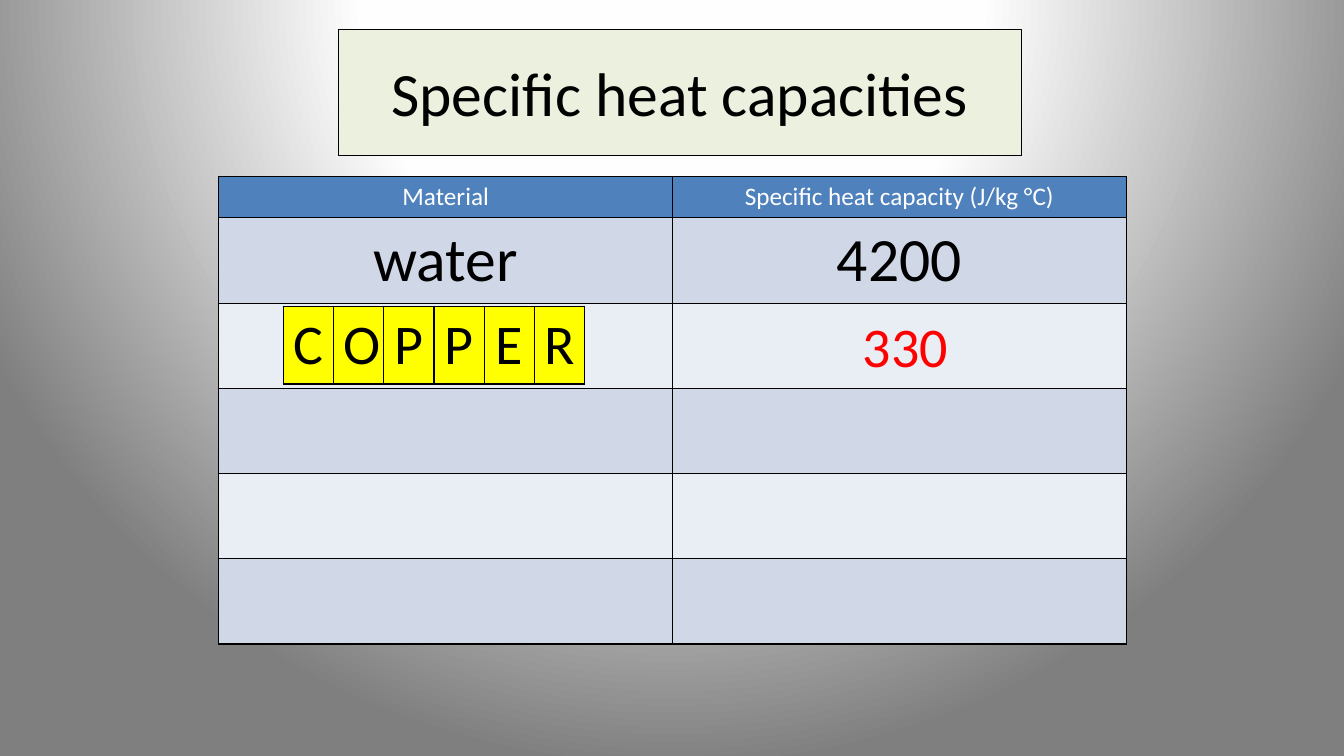
from lxml import etree
from pptx import Presentation, util as u
from pptx.dml.color import RGBColor
from pptx.enum import shapes, text
from pptx.oxml import ns

HUES = {
    "black": "000000", "white": "FFFFFF", "near": "FEFEFE", "grey": "7F7F7F",
    "cream": "EBF1DE", "blue": "4F81BD", "dark": "D0D8E8", "pale": "E9EDF4",
    "yellow": "FFFF00", "red": "FF0000",
}
FONT = "Calibri"


def hue(name):
    return RGBColor.from_string(HUES[name])


def write(frame, words, size=18, color="black", align=text.PP_ALIGN.CENTER):
    para = frame.paragraphs[0]
    para.alignment = align
    run = para.add_run()
    run.text = words
    font = run.font
    font.name, font.size, font.bold = FONT, u.Pt(size), False
    font.color.rgb = hue(color)


def node(parent, tag, **attrs):
    return etree.SubElement(parent, ns.qn(tag), attrs)


class Page:
    def __init__(self, deck):
        self.slide = deck.slides.add_slide(deck.slide_layouts[6])
        self.items = self.slide.shapes

    def glow(self, stops, focus):
        fill = self.slide.background.fill
        fill.gradient()
        grad = self.slide.background._cSld.find(".//" + ns.qn("a:gradFill"))
        for child in list(grad):
            grad.remove(child)
        group = node(grad, "a:gsLst")
        for spot, name in stops:
            stop = node(group, "a:gs", pos=str(spot * 1000))
            node(stop, "a:srgbClr", val=HUES[name])
        path = node(grad, "a:path", path="circle")
        node(path, "a:fillToRect", **{side: str(n * 1000) for side, n in focus.items()})

    def panel(self, box, words, fill, **style):
        shape = self.items.add_shape(shapes.MSO_SHAPE.RECTANGLE, *map(u.Inches, box))
        shape.shadow.inherit = False
        shape.fill.solid()
        shape.fill.fore_color.rgb = hue(fill)
        shape.line.color.rgb = hue("black")
        shape.line.width = u.Pt(0.75)
        shape.text_frame.vertical_anchor = text.MSO_ANCHOR.MIDDLE
        write(shape.text_frame, words, **style)

    def label(self, box, words, **style):
        frame = self.items.add_textbox(*map(u.Inches, box)).text_frame
        frame.word_wrap = True
        write(frame, words, **style)

    def edge(self, cell):
        props = cell._tc.get_or_add_tcPr()
        for side in "LRTB":
            line = node(props, "a:ln" + side, w=str(u.Pt(1)))
            node(node(line, "a:solidFill"), "a:srgbClr", val=HUES["black"])

    def grid(self, spot, width, highs, rows, fills, styles):
        box = (*spot, width, sum(highs))
        table = self.items.add_table(len(rows), len(rows[0]), *map(u.Inches, box)).table
        table.first_row = table.horz_banding = False
        for col in table.columns:
            col.width = u.Inches(width / len(rows[0]))
        for r, (row, high) in enumerate(zip(rows, highs)):
            table.rows[r].height = u.Inches(high)
            for c, words in enumerate(row):
                cell = table.cell(r, c)
                self.edge(cell)
                cell.fill.solid()
                cell.fill.fore_color.rgb = hue(fills[r])
                if words:
                    write(cell.text_frame, words, **styles[r])


def main():
    deck = Presentation()
    deck.slide_width, deck.slide_height = u.Inches(13.33), u.Inches(7.5)
    page = Page(deck)
    page.glow([(0, "white"), (40, "near"), (100, "grey")],
              {"l": 50, "t": -80, "r": 50, "b": 180})
    page.panel((3.36, 0.29, 6.77, 1.25), "Specific heat capacities", "cream", size=44)
    rows = [("Material", "Specific heat capacity (J/kg °C)"), ("water", "4200")]
    rows += [("", "")] * 4
    page.grid((2.17, 1.75), 9, [0.41] + [4.23 / 5] * 5, rows,
              ["blue", "dark", "pale", "dark", "pale", "dark"],
              [{"color": "white"}] + [{"size": 44}] * 5)
    page.label((8.23, 3.04, 1.5, 0.77), "330", size=40, color="red")
    page.grid((2.81, 3.04), 2.99, [0.77], ["COPPER"], ["yellow"], [{"size": 40}])
    deck.save("out.pptx")


if __name__ == "__main__":
    main()
